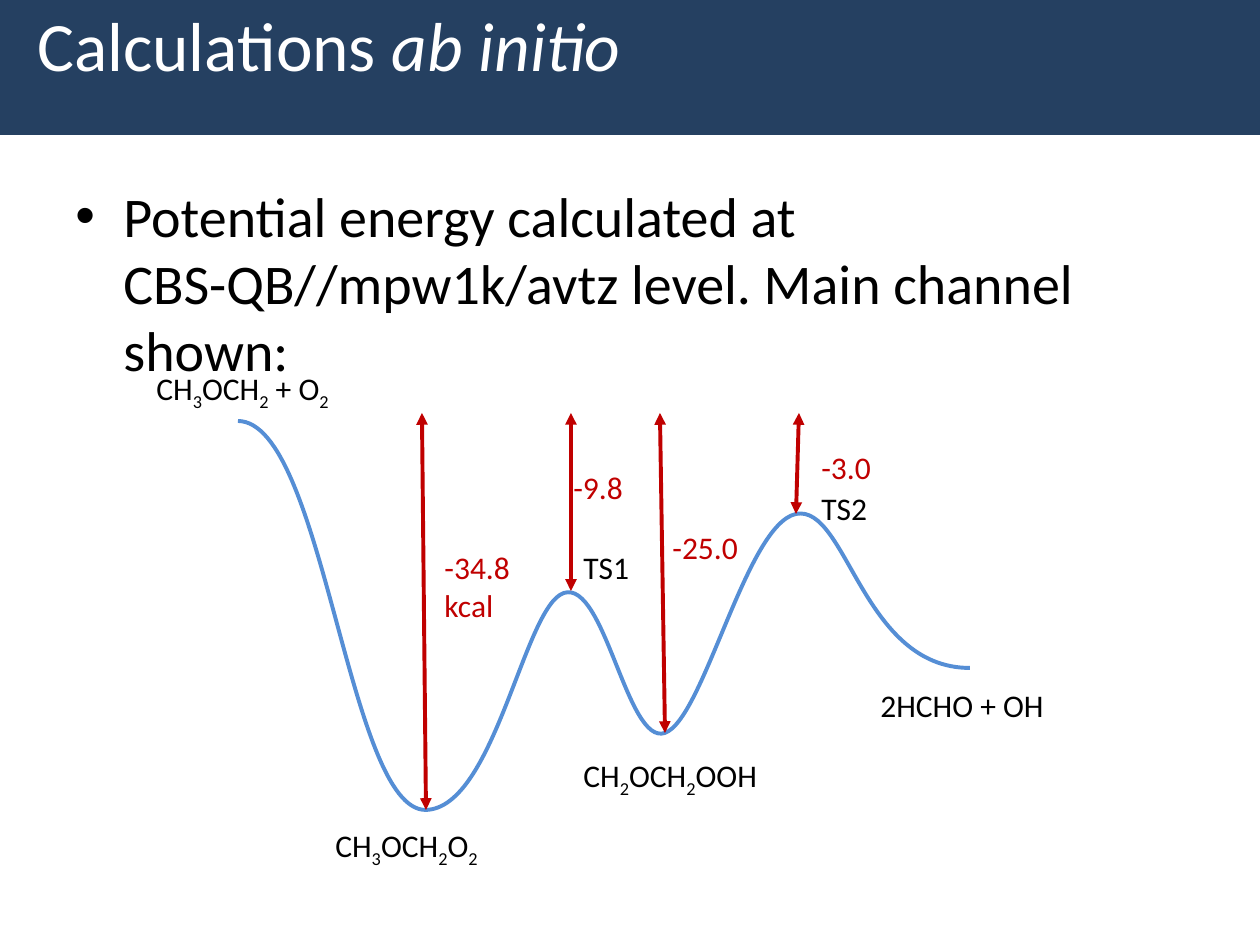
from lxml.etree import SubElement
from pptx import Presentation
from pptx.dml.color import RGBColor
from pptx.enum.shapes import MSO_CONNECTOR, MSO_SHAPE
from pptx.enum.text import MSO_ANCHOR, MSO_AUTO_SIZE
from pptx.oxml.ns import qn
from pptx.util import Emu, Pt

SCALE = 914400 / 126
NAVY, BLUE, RED, BLACK, WHITE = "254061", "558ED5", "C00000", "000000", "FFFFFF"
ARROW_TOP = 413

CURVE_START = (238, 421)
CURVE_POINTS = [
    (324, 422), (348, 811), (426, 810),
    (495, 808), (524, 606), (564, 593),
    (605, 580), (627, 746), (665, 733),
    (704, 719), (746, 525), (796, 514),
    (847, 504), (862, 668), (970, 668),
]
SPECIES = [
    ("CH_3_OCH_2_ + O_2", 144, 363, 204),
    ("CH_3_OCH_2_O_2", 323, 820, 174),
    ("TS1", 571, 542, 72),
    ("TS2", 809, 483, 72),
    ("2HCHO + OH", 868, 680, 190),
    ("CH_2_OCH_2_OOH", 571, 750, 204),
]
ENERGIES = [
    ("-34.8\nkcal", 432, 542, 92),
    ("-9.8", 561, 462, 76),
    ("-25.0", 660, 522, 92),
    ("-3.0", 809, 442, 76),
]
ARROWS = [(422, 426, 810), (571, 571, 591), (660, 665, 733), (799, 796, 514)]


def px(length):
    """Turn pixels into EMU."""
    return Emu(round(length * SCALE))


def rgb(color):
    """Turn a hex string into a colour."""
    return RGBColor.from_string(color)


def add_text(slide, text, left, top, width, height, size=18, color=BLACK,
             marked="subscript", wrap=False, anchor=MSO_ANCHOR.TOP):
    """Add a text box in which underscores switch the marked format on and off."""
    shape = slide.shapes.add_textbox(px(left), px(top), px(width), px(height))
    frame = shape.text_frame
    frame.word_wrap = wrap
    frame.vertical_anchor = anchor
    frame.auto_size = MSO_AUTO_SIZE.NONE if wrap else MSO_AUTO_SIZE.SHAPE_TO_FIT_TEXT
    for number, line in enumerate(text.split("\n")):
        paragraph = frame.add_paragraph() if number else frame.paragraphs[0]
        for index, part in enumerate(line.split("_")):
            if not part:
                continue
            run = paragraph.add_run()
            run.text = part
            run.font.name = "Calibri"
            run.font.size = Pt(size)
            run.font.color.rgb = rgb(color)
            if index % 2 and marked == "italic":
                run.font.italic = True
            elif index % 2:
                run._r.get_or_add_rPr().set("baseline", "-25000")
    return shape


def add_bullet(shape, indent):
    """Give the first paragraph of a shape a hanging bullet."""
    properties = shape.text_frame.paragraphs[0]._p.get_or_add_pPr()
    properties.set("marL", str(px(indent)))
    properties.set("indent", str(-px(indent)))
    SubElement(properties, qn("a:buFont")).set("typeface", "Arial")
    SubElement(properties, qn("a:buChar")).set("char", "•")


def add_band(slide, width, height):
    """Add the title band across the top."""
    band = slide.shapes.add_shape(MSO_SHAPE.RECTANGLE, 0, 0, px(width), px(height))
    band.shadow.inherit = False
    band.fill.solid()
    band.fill.fore_color.rgb = rgb(NAVY)
    band.line.fill.background()


def add_curve(slide, start, points):
    """Add an open Bezier curve, with three points for each segment."""
    builder = slide.shapes.build_freeform(*start, scale=SCALE)
    builder.add_line_segments(points, close=False)
    curve = builder.convert_to_shape()
    outline = next(curve._element.iter(qn("a:path")))
    lines = outline.findall(qn("a:lnTo"))
    for first in range(0, len(lines), 3):
        segment = SubElement(outline, qn("a:cubicBezTo"))
        for line in lines[first:first + 3]:
            segment.append(line[0])
            outline.remove(line)
    curve.shadow.inherit = False
    curve.fill.background()
    curve.line.color.rgb = rgb(BLUE)
    curve.line.width = Pt(2.25)


def add_arrow(slide, start, end):
    """Add a red arrow with a head at both ends."""
    arrow = slide.shapes.add_connector(MSO_CONNECTOR.STRAIGHT, *map(px, start + end))
    arrow.line.color.rgb = rgb(RED)
    arrow.line.width = Pt(2.25)
    line = arrow.line._get_or_add_ln()
    for tag in ("a:headEnd", "a:tailEnd"):
        SubElement(line, qn(tag)).set("type", "triangle")
    SubElement(arrow._element.spPr, qn("a:effectLst"))


def main():
    """Build the slide and save it."""
    presentation = Presentation()
    presentation.slide_width, presentation.slide_height = px(1260), px(945)
    slide = presentation.slides.add_slide(presentation.slide_layouts[6])
    add_band(slide, 1260, 135)
    add_text(slide, "Calculations _ab initio", 25, 0, 1134, 87, size=39.6,
             color=WHITE, marked="italic", wrap=True, anchor=MSO_ANCHOR.MIDDLE)
    body = add_text(
        slide,
        "Potential energy calculated at CBS-QB//mpw1k/avtz level. Main channel shown:",
        63, 175, 1134, 725, size=32, wrap=True)
    add_bullet(body, 48)
    add_curve(slide, CURVE_START, CURVE_POINTS)
    for text, left, top, width in SPECIES:
        add_text(slide, text, left, top, width, 50)
    for top_x, bottom_x, bottom in ARROWS:
        add_arrow(slide, (top_x, ARROW_TOP), (bottom_x, bottom))
    for text, left, top, width in ENERGIES:
        add_text(slide, text, left, top, width, 89 if "\n" in text else 50, color=RED)
    presentation.save("out.pptx")


if __name__ == "__main__":
    main()
